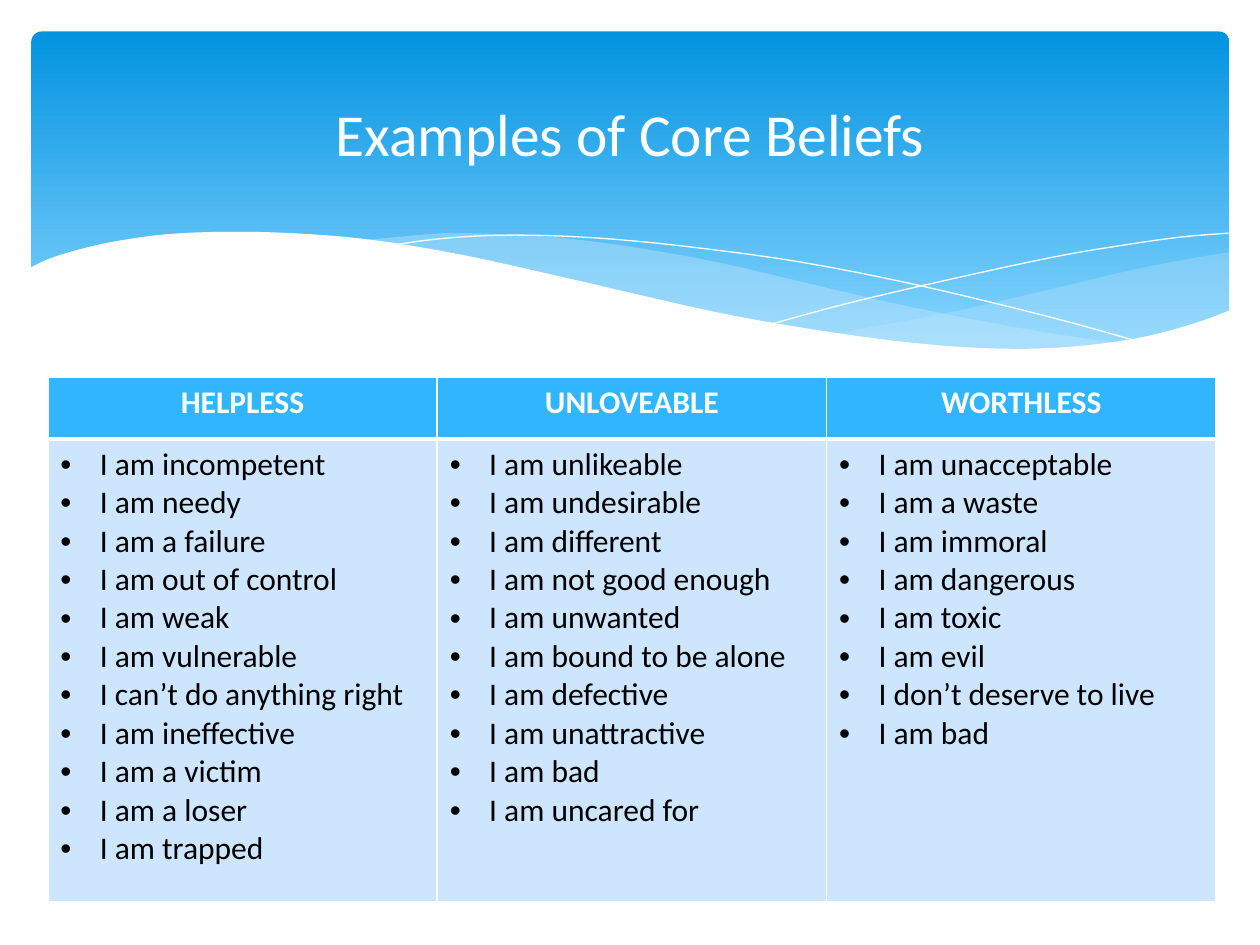
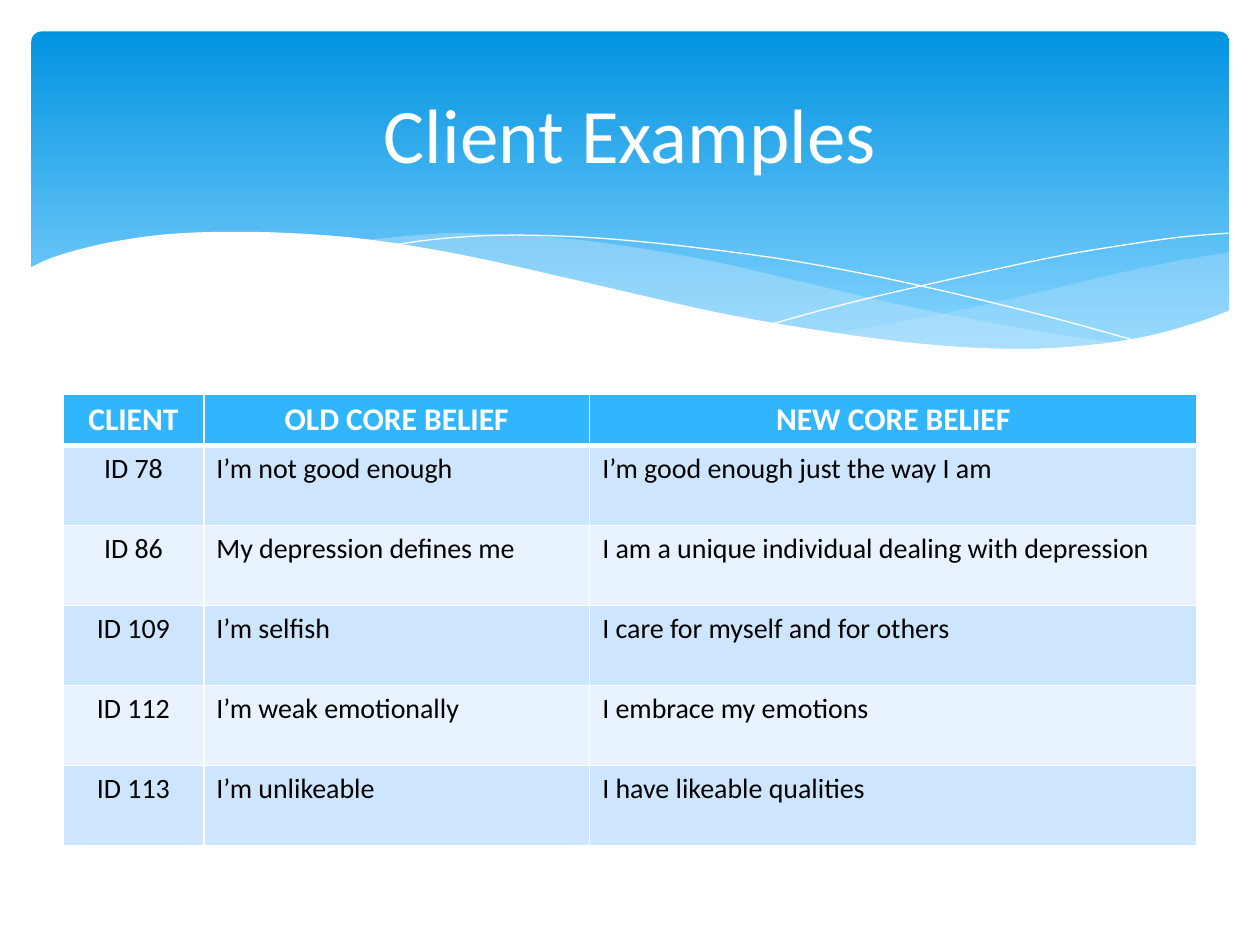
from dataclasses import dataclass
from itertools import pairwise

from lxml.etree import SubElement
from pptx import Presentation
from pptx.dml.color import RGBColor as Rgb
from pptx.enum.shapes import MSO_SHAPE as Shape
from pptx.enum.text import MSO_ANCHOR as Anchor, MSO_AUTO_SIZE as AutoSize, PP_ALIGN as Align
from pptx.oxml.ns import qn
from pptx.util import Pt


@dataclass(frozen=True)
class Theme:
    font: str = "Calibri"
    white: str = "FFFFFF"
    black: str = "000000"
    band_top: str = "0293E0"
    band_bottom: str = "83D3FE"
    wave: str = "C6E7FC"
    header: str = "31B6FD"
    row_dark: str = "CEE5FE"
    row_light: str = "E8F3FF"
    title_size: int = 44
    long_title_size: int = 34
    table_size: int = 18
    small_table_size: int = 16
    rule: int = 1
    header_rule: int = 3


THEME = Theme()

# Wave outlines: knots in points, joined by smooth curves
RIGHT_WAVE_TOP = [(702.7, 144), (673.2, 149), (641.5, 155.5), (599, 165.6),
                  (542.2, 178.6), (475.9, 190.8)]
RIGHT_WAVE_BOTTOM = [(475.9, 190.8), (507.6, 195.1), (545, 198.7), (586.1, 200.2),
                     (621.4, 198), (651.6, 193.7), (678.2, 186.5), (702.7, 177.8)]
MIDDLE_WAVE_TOP = [(643, 196.6), (602.6, 190.8), (558, 182.9), (508.3, 172.8),
                   (452.9, 159.8), (409.7, 149.8), (370.1, 142.6), (334.8, 137.5),
                   (302.4, 134.6), (260, 133.2), (236.2, 134.6), (206, 137.5)]
MIDDLE_WAVE_BOTTOM = [(206, 137.5), (246.2, 143.3), (290.9, 151.9), (323.3, 159.8),
                      (381.6, 172.8), (432.7, 183.6), (478.8, 191.5), (519.8, 197.3),
                      (556.6, 199.4), (589, 200.2), (617, 199.4), (643, 196.6)]
FALLING_LINE = [(222.5, 140.4), (247.7, 136.8), (278.6, 134.6), (311.8, 134.6),
                (352.1, 136.8), (400.3, 141.8), (457.9, 149.8), (523.4, 162.7),
                (598.3, 180.7), (653, 195.8)]
RISING_LINE = [(441.4, 185), (483.8, 173.5), (538.6, 160.6), (601.9, 146.9),
               (644.4, 139.7), (675.4, 135.4), (702, 133.2)]
WHITE_WAVE_TOP = [(703.4, 177.1), (684, 184.3), (655.2, 192.2), (621.4, 197.3),
                  (582.5, 199.4), (535.7, 197.3), (481, 190.8), (416.9, 180),
                  (362.2, 167.8), (321.8, 158.4), (262.8, 145.4), (210.2, 136.8),
                  (165.6, 133.2), (127.4, 132.5), (95, 133.9), (68.4, 137.5),
                  (48.2, 141.8), (28.8, 147.6), (16.6, 153.4)]
WHITE_WAVE_BASE = [(16.6, 236.9), (703.4, 236.9)]

# Slide content
BELIEFS = {
    "HELPLESS": ["I am incompetent", "I am needy", "I am a failure", "I am out of control",
                 "I am weak", "I am vulnerable", "I can’t do anything right",
                 "I am ineffective", "I am a victim", "I am a loser", "I am trapped"],
    "UNLOVEABLE": ["I am unlikeable", "I am undesirable", "I am different",
                   "I am not good enough", "I am unwanted", "I am bound to be alone",
                   "I am defective", "I am unattractive", "I am bad", "I am uncared for"],
    "WORTHLESS": ["I am unacceptable", "I am a waste", "I am immoral", "I am dangerous",
                  "I am toxic", "I am evil", "I don’t deserve to live", "I am bad"],
}
CLIENT_HEADINGS = ["CLIENT", "OLD CORE BELIEF", "NEW CORE BELIEF"]
CLIENTS = [
    ("ID 78", "I’m not good enough", "I’m good enough just the way I am"),
    ("ID 86", "My depression defines me", "I am a unique individual dealing with depression"),
    ("ID 109", "I’m selfish", "I care for myself and for others"),
    ("ID 112", "I’m weak emotionally", "I embrace my emotions"),
    ("ID 113", "I’m unlikeable", "I have likeable qualities"),
]


# Text
def add_bullet(para):
    props = para._p.get_or_add_pPr()
    props.set("marL", str(Pt(22.5)))
    props.set("indent", str(-Pt(22.5)))
    SubElement(props, qn("a:buFont"), typeface="Arial")
    SubElement(props, qn("a:buChar"), char="•")


def write(frame, text, size, color=THEME.black, bold=False, align=Align.LEFT, bullet=False):
    """Fill a text frame, one paragraph for each line of text."""
    for number, line in enumerate(text.split("\n")):
        para = frame.add_paragraph() if number else frame.paragraphs[0]
        para.alignment = align
        if bullet:
            add_bullet(para)
        span = para.add_run()
        span.text = line
        span.font.name, span.font.size, span.font.bold = THEME.font, Pt(size), bold
        span.font.color.rgb = Rgb.from_string(color)


# Curved band
def smooth(knots, steps=4):
    """Return points on a Catmull-Rom curve through the knots."""
    padded = [knots[0], *knots, knots[-1]]
    points = [knots[0]]
    for index, (start, end) in enumerate(pairwise(knots)):
        before, after = padded[index], padded[index + 3]
        for step in range(1, steps + 1):
            t = step / steps
            points.append(tuple(
                (2 * b + (c - a) * t + (2 * a - 5 * b + 4 * c - d) * t ** 2
                 + (3 * b - a - 3 * c + d) * t ** 3) / 2
                for a, b, c, d in zip(before, start, end, after)))
    return points


def add_outline(slide, points, closed):
    start, *rest = [(Pt(x), Pt(y)) for x, y in points]
    builder = slide.shapes.build_freeform(*start, scale=1.0)
    builder.add_line_segments(rest, close=closed)
    outline = builder.convert_to_shape()
    outline.shadow.inherit = False
    return outline


def add_wave(slide, points, color, opacity=100):
    wave = add_outline(slide, points, closed=True)
    wave.fill.solid()
    wave.fill.fore_color.rgb = Rgb.from_string(color)
    wave.line.fill.background()
    if opacity < 100:
        tint = wave.element.spPr.find(qn("a:solidFill"))[0]
        SubElement(tint, qn("a:alpha"), val=str(opacity * 1000))
    return wave


def add_curve(slide, knots):
    curve = add_outline(slide, smooth(knots), closed=False)
    curve.fill.background()
    curve.line.color.rgb = Rgb.from_string(THEME.white)
    curve.line.width = Pt(0)
    return curve


def add_band(slide):
    band = slide.shapes.add_shape(Shape.ROUNDED_RECTANGLE, Pt(18), Pt(18), Pt(684.5), Pt(194.4))
    band.adjustments[0] = 0.03
    band.shadow.inherit = False
    band.line.fill.background()
    band.fill.gradient()
    band.fill.gradient_angle = 270
    stops = zip(band.fill.gradient_stops, (0, 0.9), (THEME.band_top, THEME.band_bottom))
    for stop, position, color in stops:
        stop.position = position
        stop.color.rgb = Rgb.from_string(color)
    return band


def prepare_layout(layout, slide):
    """Put the band and the title position on the layout that all slides use."""
    parts = [
        add_band(slide),
        add_wave(slide, smooth(RIGHT_WAVE_TOP) + smooth(RIGHT_WAVE_BOTTOM), THEME.wave, 29),
        add_wave(slide, smooth(MIDDLE_WAVE_TOP) + smooth(MIDDLE_WAVE_BOTTOM), THEME.wave, 40),
        add_curve(slide, FALLING_LINE),
        add_curve(slide, RISING_LINE),
        add_wave(slide, smooth(WHITE_WAVE_TOP) + WHITE_WAVE_BASE, THEME.white),
    ]
    for number, part in enumerate(parts):
        part.element.xpath(".//p:cNvPr")[0].set("id", str(20 + number))
        layout.shapes.element.insert(2 + number, part.element)
    title = layout.placeholders[0]
    title.left, title.top, title.width, title.height = Pt(36), Pt(26.6), Pt(648), Pt(98.6)


def add_title(slide, text, size):
    frame = slide.shapes.title.text_frame
    frame.vertical_anchor = Anchor.MIDDLE
    frame.auto_size = AutoSize.NONE
    write(frame, text, size, color=THEME.white, align=Align.CENTER)


# Tables
def set_borders(cell, top, bottom):
    props = cell._tc.get_or_add_tcPr()
    widths = {"a:lnL": THEME.rule, "a:lnR": THEME.rule, "a:lnT": top, "a:lnB": bottom}
    for number, (tag, width) in enumerate(widths.items()):
        line = SubElement(props, qn(tag), w=str(Pt(width)))
        SubElement(SubElement(line, qn("a:solidFill")), qn("a:srgbClr"), val=THEME.white)
        props.insert(number, line)


def add_grid(slide, left, top, widths, heights):
    """Add a table with banded fills and white rules."""
    grid = slide.shapes.add_table(len(heights), len(widths), Pt(left), Pt(top),
                                  Pt(sum(widths)), Pt(sum(heights))).table
    for column, width in zip(grid.columns, widths):
        column.width = Pt(width)
    for number, (row, height) in enumerate(zip(grid.rows, heights)):
        row.height = Pt(height)
        color = (THEME.row_dark if number % 2 else THEME.row_light) if number else THEME.header
        for cell in row.cells:
            cell.fill.solid()
            cell.fill.fore_color.rgb = Rgb.from_string(color)
            set_borders(cell, top=THEME.header_rule if number == 1 else THEME.rule,
                        bottom=THEME.rule if number else THEME.header_rule)
    return grid


def write_headings(grid, headings):
    for cell, heading in zip(grid.rows[0].cells, headings):
        write(cell.text_frame, heading, THEME.table_size, color=THEME.white,
              bold=True, align=Align.CENTER)


# Slides
def fill_beliefs_slide(slide):
    add_title(slide, "Examples of Core Beliefs", THEME.long_title_size)
    grid = add_grid(slide, 27.36, 215.5, [222.5] * 3, [35.3, 264.5])
    write_headings(grid, BELIEFS)
    for cell, beliefs in zip(grid.rows[1].cells, BELIEFS.values()):
        write(cell.text_frame, "\n".join(beliefs), THEME.table_size, bullet=True)


def fill_clients_slide(slide):
    add_title(slide, "Client Examples", THEME.title_size)
    grid = add_grid(slide, 36, 225.5, [80.5, 220.5, 347], [26] + [45.7] * len(CLIENTS))
    write_headings(grid, CLIENT_HEADINGS)
    for number, client in enumerate(CLIENTS, start=1):
        for column, text in enumerate(client):
            write(grid.cell(number, column).text_frame, text, THEME.small_table_size,
                  align=Align.LEFT if column else Align.CENTER)


def main():
    deck = Presentation()
    deck.slide_width, deck.slide_height = Pt(720), Pt(540)
    layout = deck.slide_layouts.get_by_name("Title Only")
    beliefs_slide, clients_slide = [deck.slides.add_slide(layout) for _ in range(2)]
    prepare_layout(layout, beliefs_slide)
    fill_beliefs_slide(beliefs_slide)
    fill_clients_slide(clients_slide)
    deck.save("out.pptx")


if __name__ == "__main__":
    main()
